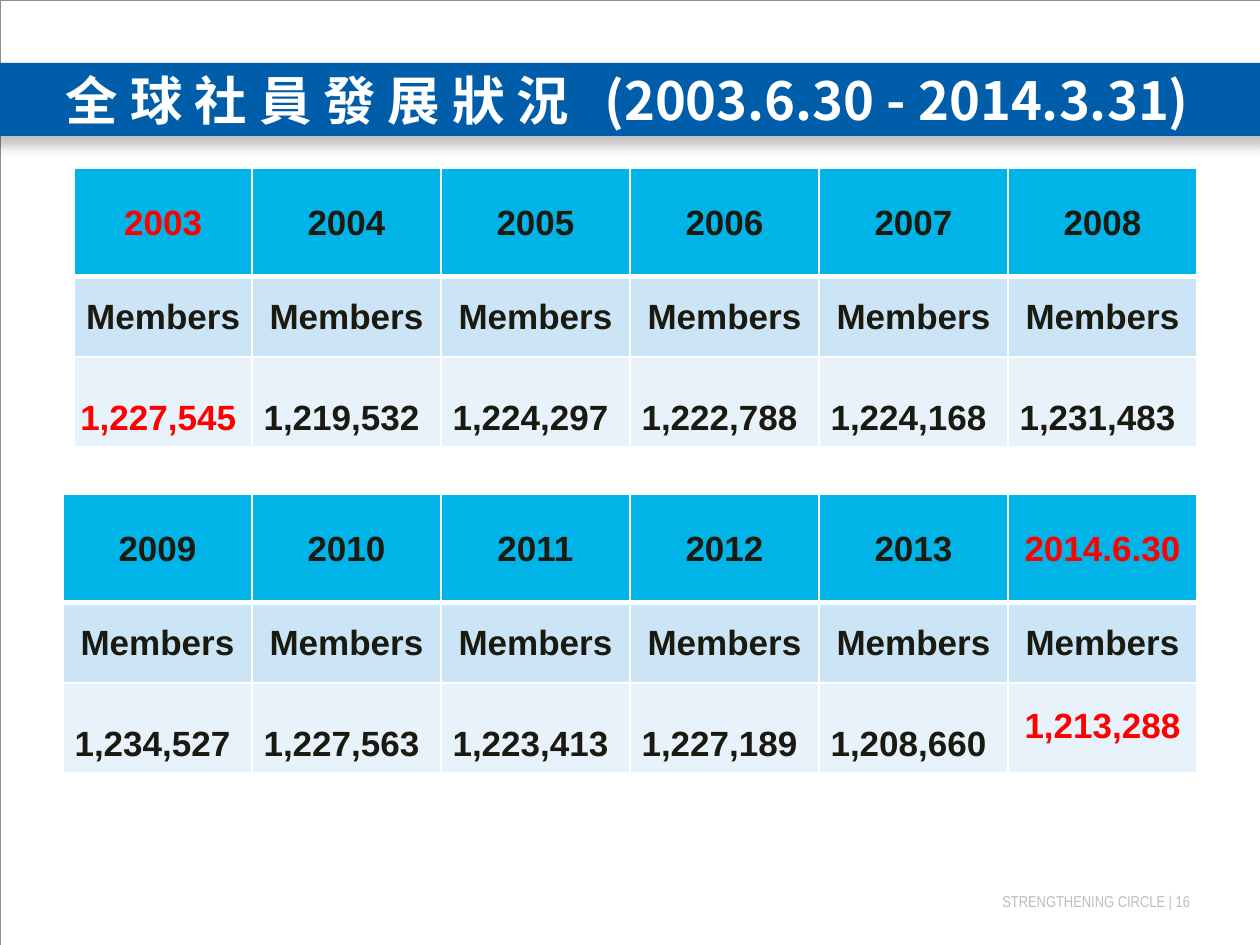
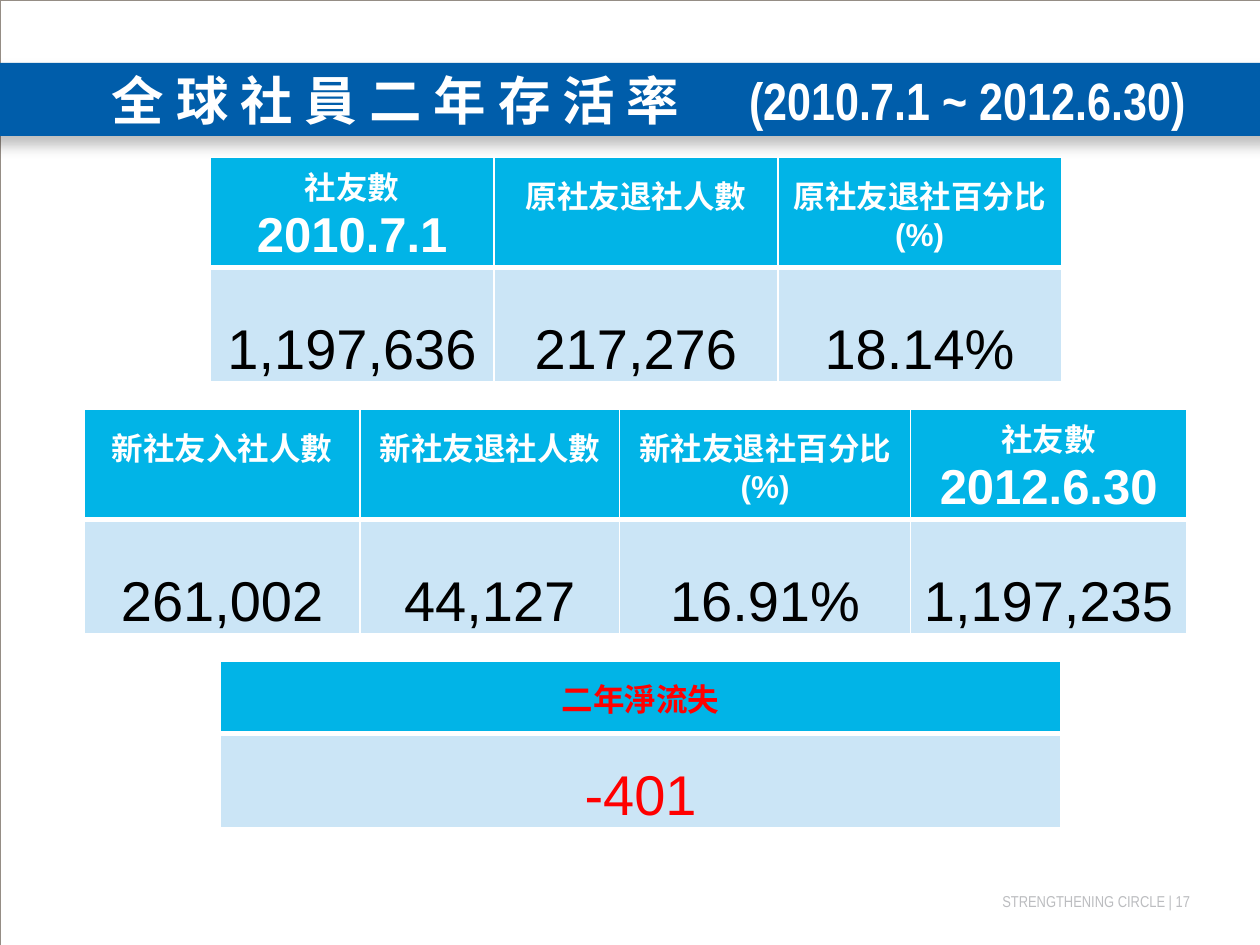
from lxml import etree
from pptx import Presentation
from pptx.dml.color import RGBColor
from pptx.enum.shapes import MSO_SHAPE
from pptx.enum.text import MSO_ANCHOR, MSO_AUTO_SIZE, PP_ALIGN
from pptx.oxml.ns import qn
from pptx.util import Cm, Pt

RECTANGLE = MSO_SHAPE.RECTANGLE
MIDDLE, BOTTOM = MSO_ANCHOR.MIDDLE, MSO_ANCHOR.BOTTOM
LEFT, CENTER, RIGHT = PP_ALIGN.LEFT, PP_ALIGN.CENTER, PP_ALIGN.RIGHT
NO_AUTOFIT = MSO_AUTO_SIZE.NONE

COLORS = {
    "band": "005DAA", "frame": "958D85", "footer": "BCBDC0", "header": "01B4E7",
    "row": "CBE5F6", "light row": "E7F2FA", "ink": "1B1A11", "black": "000000",
    "white": "FFFFFF", "highlight": "FF0000",
}
RGB = {name: RGBColor.from_string(value) for name, value in COLORS.items()}
EAST_ASIAN_FONT = "Noto Sans CJK SC"
HIGHLIGHTS = {"2003", "1,227,545", "2014.6.30", "1,213,288", "二年淨流失", "-401"}
LARGE_DATES = {"2010.7.1", "2012.6.30"}


def margins(left, top, right, bottom):
    return {"margin_left": Cm(left), "margin_top": Cm(top),
            "margin_right": Cm(right), "margin_bottom": Cm(bottom)}


def format_run(run, color, **font_values):
    for attribute, value in font_values.items():
        setattr(run.font, attribute, value)
    run.font.color.rgb = RGB[color]
    etree.SubElement(run.font._element, qn("a:ea"), typeface=EAST_ASIAN_FONT)


TIGHT = margins(0.03, 0.03, 0.03, 0)
HEADING = margins(0.25, 0.06, 0.25, 0.06)
RAISED_HEADING = margins(0.25, 0.06, 0.25, 0.79)
LOWERED_COUNT = margins(0.03, 0.74, 0.23, 0)

# fill, text colour, size, bold, anchor, cell margins
ROW_STYLES = {
    "year": ("header", "ink", 20, True, MIDDLE, TIGHT),
    "label": ("row", "ink", 20, True, MIDDLE, TIGHT),
    "count": ("light row", "ink", 20, True, MIDDLE, LOWERED_COUNT),
    "heading": ("header", "white", 18, True, MIDDLE, HEADING),
    "figure": ("row", "black", 32, False, BOTTOM, TIGHT),
}
MEMBERS = ["Members"] * 6
YEAR_HEIGHTS = [2.18, 1.63, 1.8]
RATE_HEIGHTS = [2.21, 2.31]

SLIDES = [
    {
        "page": 16,
        "title": "全 球 社 員 發 展 狀 況\t(2003.6.30 - 2014.3.31)",
        "font": "Noto Sans CJK JP", "indent": 1.33, "tab": 10.85,
        "tables": [
            (1.5, 3.39, [3.58] + [3.81] * 5, YEAR_HEIGHTS, [
                ("year", ["2003", "2004", "2005", "2006", "2007", "2008"]),
                ("label", MEMBERS),
                ("count", ["1,227,545", "1,219,532", "1,224,297",
                           "1,222,788", "1,224,168", "1,231,483"]),
            ]),
            (1.27, 9.96, [3.81] * 6, YEAR_HEIGHTS, [
                ("year", ["2009", "2010", "2011", "2012", "2013", "2014.6.30"]),
                ("label", MEMBERS),
                ("count", ["1,234,527", "1,227,563", "1,223,413",
                           "1,227,189", "1,208,660", "1,213,288"]),
            ]),
        ],
    },
    {
        "page": 17,
        "title": "全 球 社 員 二 年 存 活 率\t(2010.7.1 ~ 2012.6.30)",
        "font": "Arial Narrow", "indent": 2.25, "tab": 12.85,
        "tables": [
            (4.24, 3.18, [5.72] * 3, RATE_HEIGHTS, [
                ("heading", ["社友數\n2010.7.1", "原社友退社人數",
                             "原社友退社百分比\n(%)"]),
                ("figure", ["1,197,636", "217,276", "18.14%"]),
            ]),
            (1.7, 8.26, [5.56, 5.23, 5.87, 5.56], RATE_HEIGHTS, [
                ("heading", ["新社友入社人數", "新社友退社人數",
                             "新社友退社百分比\n(%)", "社友數\n2012.6.30"]),
                ("figure", ["261,002", "44,127", "16.91%", "1,197,235"]),
            ]),
            (4.45, 13.34, [16.93], [1.45, 1.9], [
                ("heading", ["二年淨流失"]),
                ("figure", ["-401"]),
            ]),
        ],
    },
]

prs = Presentation()
prs.slide_width, prs.slide_height = Cm(25.4), Cm(19.05)

for content in SLIDES:
    slide = prs.slides.add_slide(prs.slide_layouts[5])
    shapes = slide.shapes

    # Page frame, title band and footer
    frame = shapes.add_shape(RECTANGLE, 0, 0, prs.slide_width, prs.slide_height)
    frame.shadow.inherit = False
    frame.fill.background()
    frame.line.color.rgb = RGB["frame"]
    frame.line.width = Pt(0.13)

    band = shapes.add_shape(RECTANGLE, Cm(-0.2), Cm(1.27), Cm(25.83), Cm(1.47))
    band.shadow.inherit = False
    band.fill.solid()
    band.fill.fore_color.rgb = RGB["band"]
    band.line.fill.background()
    effects = band._element.spPr.find(qn("a:effectLst"))
    shadow = etree.SubElement(effects, qn("a:outerShdw"), blurRad=str(Pt(8)),
                              dist=str(Pt(5)), dir="5400000", algn="t", rotWithShape="0")
    shadow_color = etree.SubElement(shadow, qn("a:srgbClr"), val=COLORS["black"])
    etree.SubElement(shadow_color, qn("a:alpha"), val="25000")

    footer = shapes.add_textbox(Cm(19.69), Cm(17.98), Cm(4.44), Cm(0.38)).text_frame
    for attribute, value in {"word_wrap": True, **margins(0, 0, 0.14, 0)}.items():
        setattr(footer, attribute, value)
    footer.text = f"STRENGTHENING CIRCLE | {content['page']}"
    footer.paragraphs[0].alignment = RIGHT
    format_run(footer.paragraphs[0].runs[0], "footer", name="Arial Narrow", size=Pt(9))

    # The title lies in front of the band
    title = shapes.title
    shapes.element.append(title.element)
    title.left, title.top, title.width, title.height = 0, Cm(1.27), Cm(25.4), Cm(1.47)
    title_frame = title.text_frame
    title_format = {"auto_size": NO_AUTOFIT, "word_wrap": True, "vertical_anchor": MIDDLE,
                    **margins(content["indent"], 0, 0, 0)}
    for attribute, value in title_format.items():
        setattr(title_frame, attribute, value)
    title_frame.text = content["title"]
    heading = title_frame.paragraphs[0]
    heading.alignment = LEFT
    tabs = etree.SubElement(heading._p.get_or_add_pPr(), qn("a:tabLst"))
    etree.SubElement(tabs, qn("a:tab"), pos=str(Cm(content["tab"])), algn="l")
    format_run(heading.runs[0], "white", name=content["font"], size=Pt(30), bold=True)

    for left, top, widths, heights, rows in content["tables"]:
        table = shapes.add_table(len(rows), len(widths), Cm(left), Cm(top),
                                 Cm(sum(widths)), Cm(sum(heights))).table
        table.first_row = table.horz_banding = False
        for column, width in zip(table.columns, widths):
            column.width = Cm(width)
        for row, height in zip(table.rows, heights):
            row.height = Cm(height)

        for row_index, (style, texts) in enumerate(rows):
            fill, color, size, bold, anchor, cell_margins = ROW_STYLES[style]
            border_widths = {"lnL": 1, "lnR": 1, "lnT": 3 if row_index == 1 else 1,
                             "lnB": 3 if row_index == 0 else 1}
            for column_index, text in enumerate(texts):
                cell = table.cell(row_index, column_index)
                cell_format = {"vertical_anchor": anchor, **cell_margins}
                if text.endswith("社人數"):
                    cell_format.update(RAISED_HEADING)
                elif text == "1,213,288":
                    cell_format.update(TIGHT)
                for attribute, value in cell_format.items():
                    setattr(cell, attribute, value)

                cell_properties = cell._tc.get_or_add_tcPr()
                for side, width in border_widths.items():
                    border = etree.SubElement(cell_properties, qn(f"a:{side}"),
                                              w=str(Pt(width)))
                    border_fill = etree.SubElement(border, qn("a:solidFill"))
                    etree.SubElement(border_fill, qn("a:srgbClr"), val=COLORS["white"])
                cell.fill.solid()
                cell.fill.fore_color.rgb = RGB[fill]

                cell.text_frame.text = text
                for paragraph in cell.text_frame.paragraphs:
                    paragraph.alignment = CENTER
                    if style == "count":
                        paragraph.line_spacing = Pt(20)
                    run = paragraph.runs[0]
                    format_run(run, "highlight" if run.text in HIGHLIGHTS else color,
                               name="Arial", bold=bold,
                               size=Pt(28 if run.text in LARGE_DATES else size))

prs.save("out.pptx")
